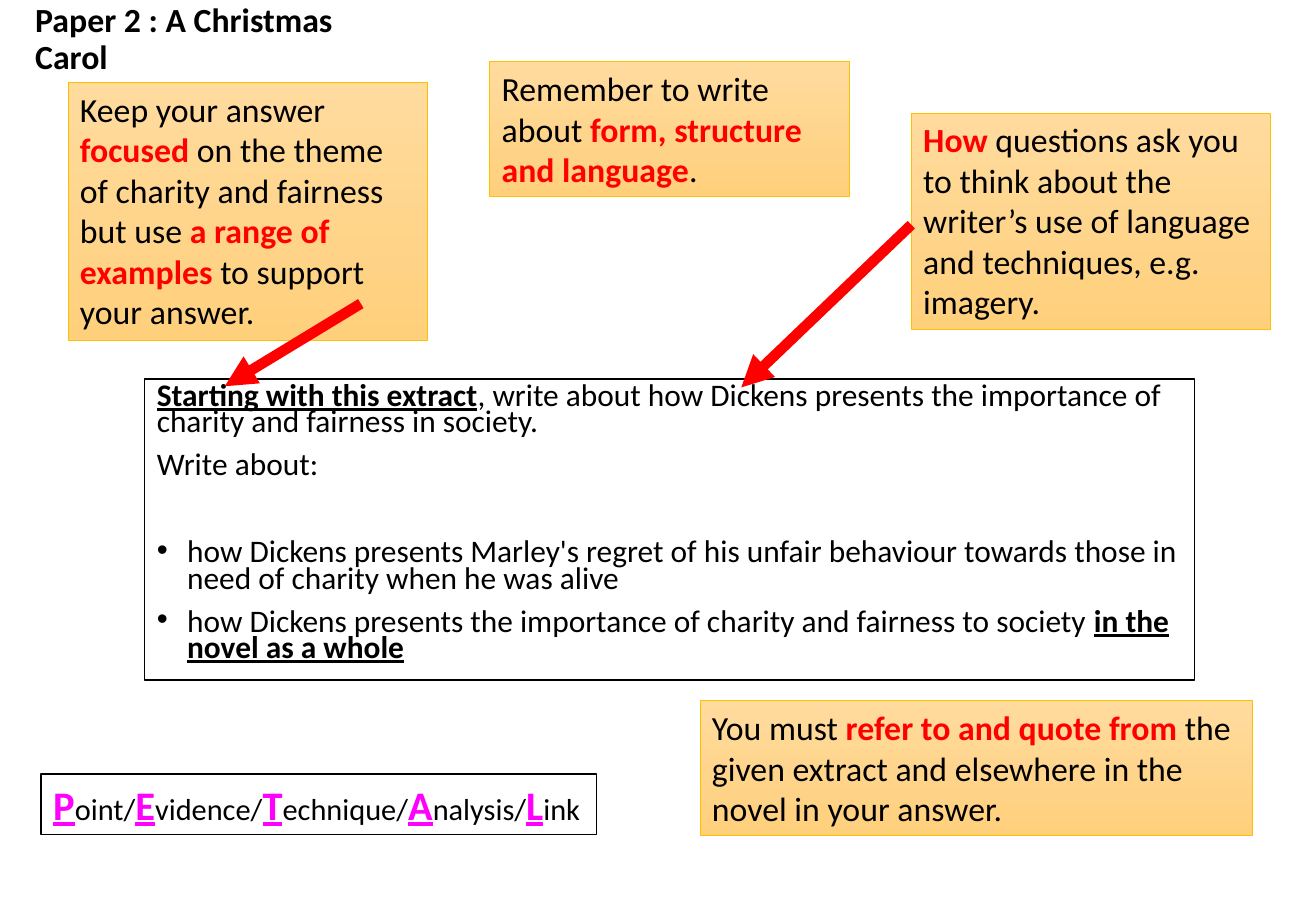
from lxml.etree import SubElement
from pptx import Presentation
from pptx.dml.color import RGBColor
from pptx.enum.shapes import MSO_CONNECTOR as Connector, MSO_SHAPE as Shape
from pptx.enum.text import MSO_ANCHOR as Anchor, MSO_AUTO_SIZE as AutoSize, PP_ALIGN as Align
from pptx.oxml.ns import qn
from pptx.util import Inches, Pt

WIDTH, HEIGHT = Inches(10.83), Inches(7.5)
FONT = "Calibri"
COLORS = {
    "text": "000000",
    "paper": "FFFFFF",
    "key": "FF0000",
    "initial": "FF00FF",
    "note_top": "FFDB9E",
    "note_bottom": "FFD07C",
    "note_line": "FFC000",
}
# Run formats
KEY = {"color": "key", "bold": True}
STRESS = {"bold": True, "underline": True}
INITIAL = {"color": "initial", "size": 24, **STRESS}

# Boxes are left, top, width, height in percent of the slide
NOTE_WIDTH = 27.33
NOTES = [
    ((69.25, 12.4, NOTE_WIDTH, 23.73),
     [("How", KEY),
      (" questions ask you to think about the writer’s use of language "
       "and techniques, e.g. imagery.", {})]),
    ((37.21, 6.8, NOTE_WIDTH, 14.8),
     [("Remember to write about ", {}), ("form, structure and language", KEY), (".", {})]),
    ((5.17, 9.07, NOTE_WIDTH, 28.27),
     [("Keep your answer ", {}), ("focused", KEY),
      (" on the theme of charity and fairness but use ", {}),
      ("a range of examples ", KEY), ("to support your answer.", {})]),
    ((53.19, 76.93, 42.01, 14.8),
     [("You must ", {}), ("refer to and quote from ", KEY),
      ("the given extract and elsewhere in the novel in your answer.", {})]),
]
ARROWS = [((69.25, 24.67), (56.33, 42.53)), ((27.42, 33.33), (17.08, 42.4))]

# Question paragraphs: runs, bulleted, points before
QUESTION = [
    ([("Starting with this extract", STRESS),
      (", write about how Dickens presents the importance of charity "
       "and fairness in society.", {})], False, 10),
    ([("Write about:", {})], False, 10),
    ([("how Dickens presents Marley's regret of his unfair behaviour towards "
       "those in need of charity when he was alive", {})], True, 36),
    ([("how Dickens presents the importance of charity and fairness to society ", {}),
      ("in the novel as a whole", STRESS)], True, 10),
]
STEPS = ["Point/", "Evidence/", "Technique/", "Analysis/", "Link"]


def rgb(name):
    return RGBColor.from_string(COLORS[name])


def across(percent):
    return round(WIDTH * percent / 100)


def down(percent):
    return round(HEIGHT * percent / 100)


def place(shape, box):
    left, top, width, height = box
    shape.left, shape.top = across(left), down(top)
    shape.width, shape.height = across(width), down(height)


def add_run(paragraph, text, size=20, color="text", bold=False, underline=False):
    run = paragraph.add_run()
    run.text = text
    font = run.font
    font.name, font.size = FONT, Pt(size)
    font.bold, font.underline = bold, underline
    font.color.rgb = rgb(color)


def add_runs(paragraph, runs, size=20):
    paragraph.alignment = Align.LEFT
    for text, style in runs:
        add_run(paragraph, text, **{"size": size, **style})


def set_bullet(paragraph, bulleted):
    properties = paragraph._p.get_or_add_pPr()
    indent = Inches(0.25) if bulleted else 0
    properties.set("marL", str(indent))
    properties.set("indent", str(-indent))
    if bulleted:
        SubElement(properties, qn("a:buFont")).set("typeface", "Arial")
        SubElement(properties, qn("a:buChar")).set("char", "•")
    else:
        SubElement(properties, qn("a:buNone"))


def outline(shape, color, width):
    shape.line.color.rgb = rgb(color)
    shape.line.width = Pt(width)


def fill_paper(shape):
    shape.fill.solid()
    shape.fill.fore_color.rgb = rgb("paper")
    outline(shape, "text", 1)


def fill_note(shape):
    shape.fill.gradient()
    shape.fill.gradient_angle = 270
    for stop, color in zip(shape.fill.gradient_stops, ("note_top", "note_bottom")):
        stop.color.rgb = rgb(color)
    outline(shape, "note_line", 0.5)


def add_text_block(slide, box, runs, paint, size=20):
    shape = slide.shapes.add_shape(Shape.RECTANGLE, 0, 0, 0, 0)
    place(shape, box)
    shape.shadow.inherit = False
    paint(shape)
    frame = shape.text_frame
    frame.word_wrap = True
    frame.auto_size = AutoSize.SHAPE_TO_FIT_TEXT
    frame.vertical_anchor = Anchor.TOP
    add_runs(frame.paragraphs[0], runs, size)


def add_arrow(slide, start, end):
    arrow = slide.shapes.add_connector(
        Connector.STRAIGHT, across(start[0]), down(start[1]), across(end[0]), down(end[1]))
    outline(arrow, "key", 6.25)
    SubElement(arrow.line._get_or_add_ln(), qn("a:tailEnd")).set("type", "triangle")
    SubElement(arrow._element.spPr, qn("a:effectLst"))


def fill_title(title):
    place(title, (1.75, 0.4, 30.1, 8))
    frame = title.text_frame
    frame.auto_size = AutoSize.NONE
    frame.vertical_anchor = Anchor.MIDDLE
    paragraph = frame.paragraphs[0]
    paragraph.line_spacing = 0.9
    add_runs(paragraph, [("Paper 2 : A Christmas Carol", {"bold": True})])


def fill_question(body):
    place(body, (10.99, 41.6, 79.78, 33.07))
    fill_paper(body)
    frame = body.text_frame
    frame.auto_size = AutoSize.NONE
    for index, (runs, bulleted, gap) in enumerate(QUESTION):
        paragraph = frame.add_paragraph() if index else frame.paragraphs[0]
        paragraph.line_spacing = 0.7
        paragraph.space_before = Pt(gap)
        set_bullet(paragraph, bulleted)
        add_runs(paragraph, runs, size=18.6)


def main():
    presentation = Presentation()
    presentation.slide_width, presentation.slide_height = WIDTH, HEIGHT
    slide = presentation.slides.add_slide(presentation.slide_layouts[1])

    # Heading and exam question
    fill_title(slide.shapes.title)
    fill_question(slide.placeholders[1])

    # Advice notes and their arrows
    for box, runs in NOTES:
        add_text_block(slide, box, runs, fill_note)
    for start, end in ARROWS:
        add_arrow(slide, start, end)

    # Paragraph structure reminder
    steps = [run for step in STEPS for run in ((step[0], INITIAL), (step[1:], {}))]
    add_text_block(slide, (3.14, 84.93, 42.2, 6.67), steps, fill_paper, size=18)

    presentation.save("out.pptx")


if __name__ == "__main__":
    main()
